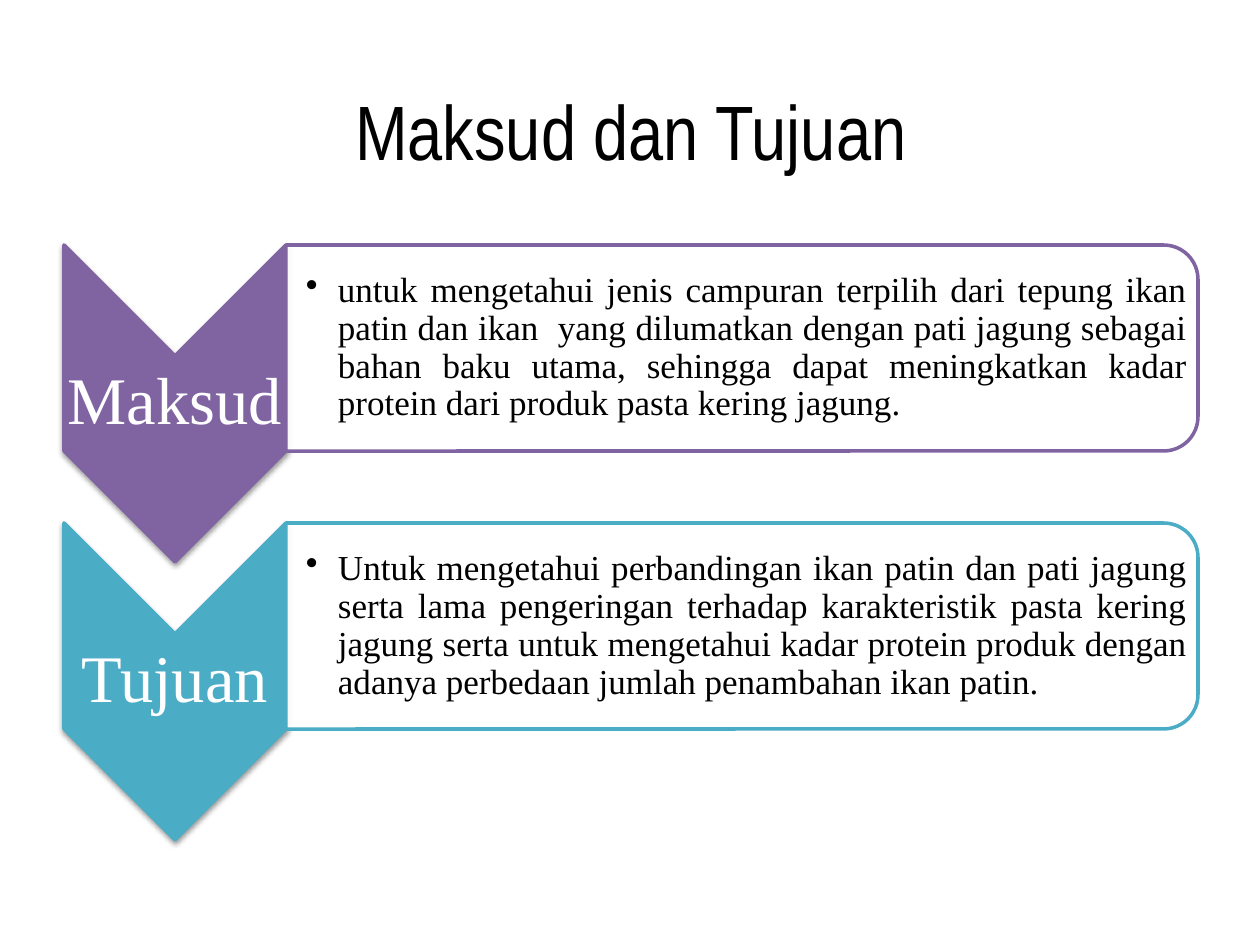
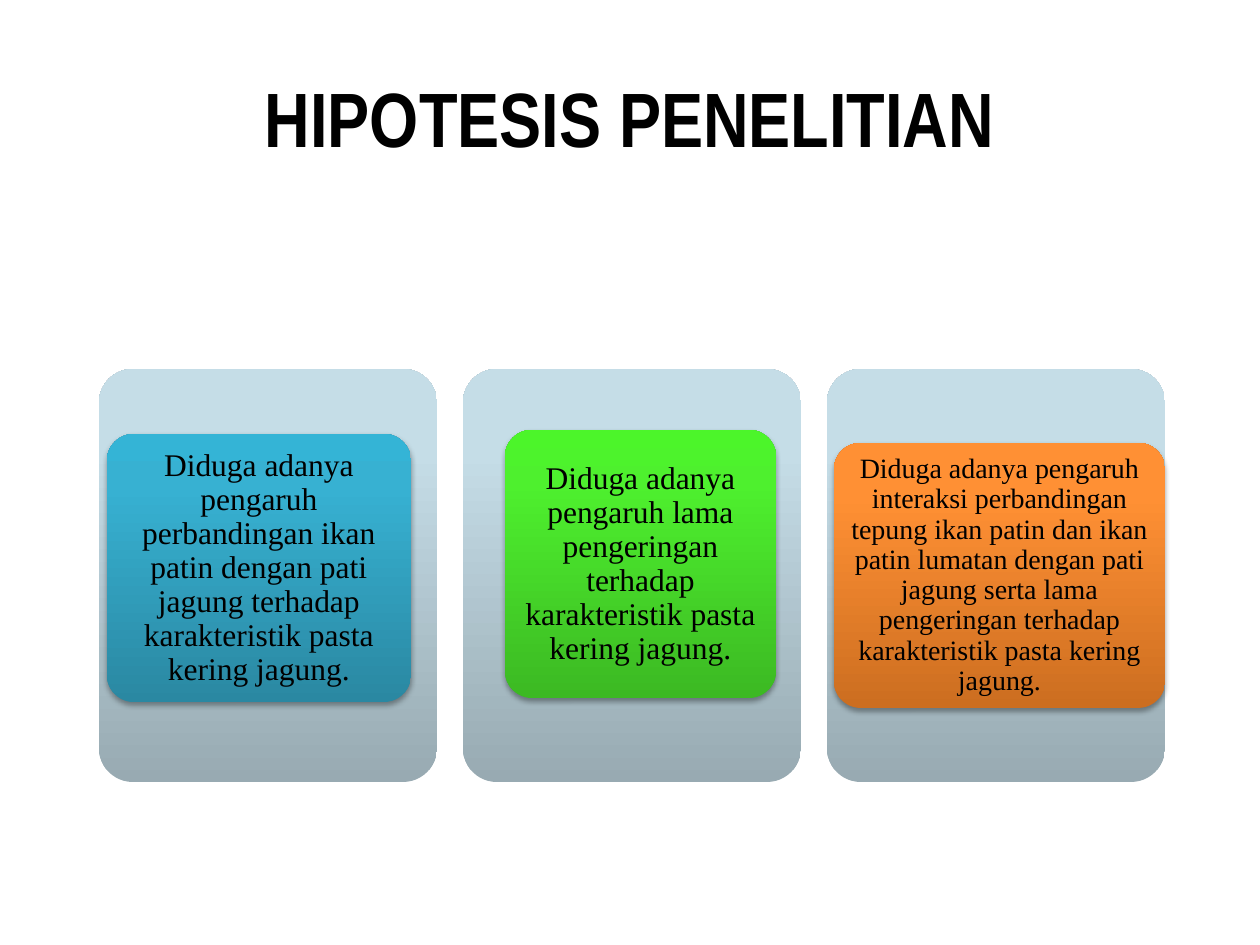
from lxml import etree
from pptx import Presentation
from pptx.dml.color import RGBColor
from pptx.enum.shapes import MSO_SHAPE
from pptx.enum.text import MSO_ANCHOR, PP_ALIGN
from pptx.oxml.ns import qn
from pptx.util import Emu, Pt

CHEVRON = MSO_SHAPE.CHEVRON
ROUND_RIGHT_BAR = MSO_SHAPE.ROUND_2_SAME_RECTANGLE
ROUNDED = MSO_SHAPE.ROUNDED_RECTANGLE
MIDDLE = MSO_ANCHOR.MIDDLE
CENTER, JUSTIFY = PP_ALIGN.CENTER, PP_ALIGN.JUSTIFY

PX_PER_INCH = 126
TITLE_FONT, BODY_FONT = "Arial Narrow", "Times New Roman"
BLACK, WHITE = "000000", "FFFFFF"
PURPLE, TEAL = "8064A2", "4BACC6"
PANEL_GRADIENT = ("98AAB2", "C5DDE7", "C6DEE9")
BLUE_GRADIENT = ("2A88A2", "37B1D2", "34B4D6")
GREEN_GRADIENT = ("3CB923", "4EF02E", "4CF52A")
ORANGE_GRADIENT = ("CC6E20", "FF9034", "FF9136")
GRADIENT_STOPS = (0, 80, 100)

CHEVRON_ROWS = [
    ("Maksud", PURPLE,
     "untuk mengetahui jenis campuran terpilih dari tepung ikan patin dan ikan  yang "
     "dilumatkan dengan pati jagung sebagai bahan baku utama, sehingga dapat "
     "meningkatkan kadar protein dari produk pasta kering jagung."),
    ("Tujuan", TEAL,
     "Untuk mengetahui perbandingan ikan patin dan pati jagung serta lama pengeringan "
     "terhadap karakteristik pasta kering jagung serta untuk mengetahui kadar protein "
     "produk dengan adanya perbedaan jumlah penambahan ikan patin."),
]
# text, gradient, card box inside its panel, text size, insets
HYPOTHESES = [
    ("Diduga adanya pengaruh perbandingan ikan patin dengan pati jagung terhadap "
     "karakteristik pasta kering jagung.",
     BLUE_GRADIENT, (8, 65, 304, 268), 18, (6, 5, 6, 5)),
    ("Diduga adanya pengaruh lama pengeringan terhadap karakteristik pasta kering jagung.",
     GREEN_GRADIENT, (42, 61, 271, 268), 18, (6, 5, 6, 5)),
    ("Diduga adanya pengaruh interaksi perbandingan tepung ikan patin dan ikan patin "
     "lumatan dengan pati jagung serta lama pengeringan terhadap karakteristik pasta "
     "kering jagung.",
     ORANGE_GRADIENT, (7, 74, 331, 265), 16, (5, 4, 5, 4)),
]


def px(length):
    return Emu(round(length * 914400 / PX_PER_INCH))


def color(hex_string):
    return RGBColor.from_string(hex_string)


def color_xml(parent, hex_string, alpha=100):
    node = etree.SubElement(parent, qn("a:srgbClr"), val=hex_string)
    if alpha < 100:
        etree.SubElement(node, qn("a:alpha"), val=str(alpha * 1000))


def add_shape(page, kind, box, turned=False):
    """Add a plain shape that covers box; a turned one is rotated a quarter clockwise."""
    left, top, width, height = box
    if turned:
        left, top = left + (width - height) / 2, top + (height - width) / 2
        width, height = height, width
    shape = page.shapes.add_shape(kind, px(left), px(top), px(width), px(height))
    shape.rotation = 90 if turned else 0
    shape.shadow.inherit = False
    shape.line.fill.background()
    return shape


def fill_solid(shape, fill, line, alpha=100):
    shape.fill.solid()
    shape.fill.fore_color.rgb = color(fill)
    if alpha < 100:
        solid = shape.element.spPr.find(qn("a:solidFill"))
        solid.clear()
        color_xml(solid, fill, alpha)
    shape.line.color.rgb = color(line)
    shape.line.width = Pt(2)


def fill_gradient(shape, colors):
    """Fill from the bottom edge up to the top edge."""
    shape.fill.gradient()
    gradient = shape.element.spPr.find(qn("a:gradFill"))
    stops = gradient.find(qn("a:gsLst"))
    stops.clear()
    for position, hex_string in zip(GRADIENT_STOPS, colors):
        stop = etree.SubElement(stops, qn("a:gs"), pos=str(position * 1000))
        color_xml(stop, hex_string)
    gradient.find(qn("a:lin")).set("ang", str(270 * 60000))


def add_shadow(shape, blur, distance, alpha):
    effects = shape.element.spPr.find(qn("a:effectLst"))
    shadow = etree.SubElement(
        effects, qn("a:outerShdw"), blurRad=str(Pt(blur)), dist=str(Pt(distance)),
        dir=str(90 * 60000), rotWithShape="0")
    color_xml(shadow, BLACK, alpha)


def write_text(shape, text, size, font=BODY_FONT, fill=BLACK, bold=False, align=CENTER,
               insets=(0, 4, 0, 4), spacing=0.9, bullet_indent=0):
    frame = shape.text_frame
    frame.word_wrap = True
    frame.vertical_anchor = MIDDLE
    frame.margin_left, frame.margin_top, frame.margin_right, frame.margin_bottom = map(px, insets)
    para = frame.paragraphs[0]
    para.alignment = align
    para.line_spacing = spacing
    if bullet_indent:
        properties = para._p.get_or_add_pPr()
        properties.set("marL", str(px(bullet_indent)))
        properties.set("indent", str(-px(bullet_indent)))
        etree.SubElement(properties, qn("a:buChar"), char="•")
    span = para.add_run()
    span.text = text
    span.font.name = font
    span.font.size = Pt(size)
    span.font.bold = bold
    span.font.color.rgb = color(fill)


def add_text(page, box, text, **text_format):
    write_text(page.shapes.add_textbox(*map(px, box)), text, **text_format)


def add_title(page, box, text, bold=False):
    add_text(page, box, text, size=44, font=TITLE_FONT, bold=bold,
             insets=(13, 6, 13, 6), spacing=1.0)


def add_chevron_row(page, box, label, accent, text):
    left, top, width, height = box
    chevron_width, bar_height = 222, 206
    bar_left, bar_width = left + chevron_width, width - chevron_width

    chevron = add_shape(page, CHEVRON, (left, top, chevron_width, height), turned=True)
    fill_solid(chevron, accent, accent)
    add_shadow(chevron, blur=3.1, distance=1.6, alpha=38)
    add_text(page, (left, top + 110, chevron_width, 96), label, size=38, fill=WHITE)

    bar = add_shape(page, ROUND_RIGHT_BAR, (bar_left, top, bar_width, bar_height), turned=True)
    fill_solid(bar, WHITE, accent, alpha=90)
    add_text(page, (bar_left, top + 10, bar_width - 10, bar_height - 20), text, size=20,
             align=JUSTIFY, insets=(20, 1, 1, 1), bullet_indent=32)


def add_hypothesis(page, box, text, gradient, card_box, size, insets):
    panel = add_shape(page, ROUNDED, box)
    card_left, card_top, card_width, card_height = card_box
    card = add_shape(page, ROUNDED,
                     (box[0] + card_left, box[1] + card_top, card_width, card_height))
    for shape, colors in ((panel, PANEL_GRADIENT), (card, gradient)):
        shape.adjustments[0] = 0.1
        fill_gradient(shape, colors)
    add_shadow(card, blur=3.1, distance=1.8, alpha=35)
    write_text(card, text, size=size, insets=insets)


def build_purpose(page):
    add_title(page, (64, 56, 1134, 147), "Maksud dan Tujuan")
    for index, row in enumerate(CHEVRON_ROWS):
        add_chevron_row(page, (64, 245 + index * 278, 1134, 317), *row)


def build_hypotheses(page):
    add_title(page, (63, 38, 1134, 158), "HIPOTESIS PENELITIAN", bold=True)
    for index, hypothesis in enumerate(HYPOTHESES):
        add_hypothesis(page, (99 + index * 364, 369, 338, 413), *hypothesis)


def main():
    deck = Presentation()
    deck.slide_width, deck.slide_height = px(1260), px(945)
    for build in (build_purpose, build_hypotheses):
        build(deck.slides.add_slide(deck.slide_layouts[6]))
    deck.save("out.pptx")


if __name__ == "__main__":
    main()
